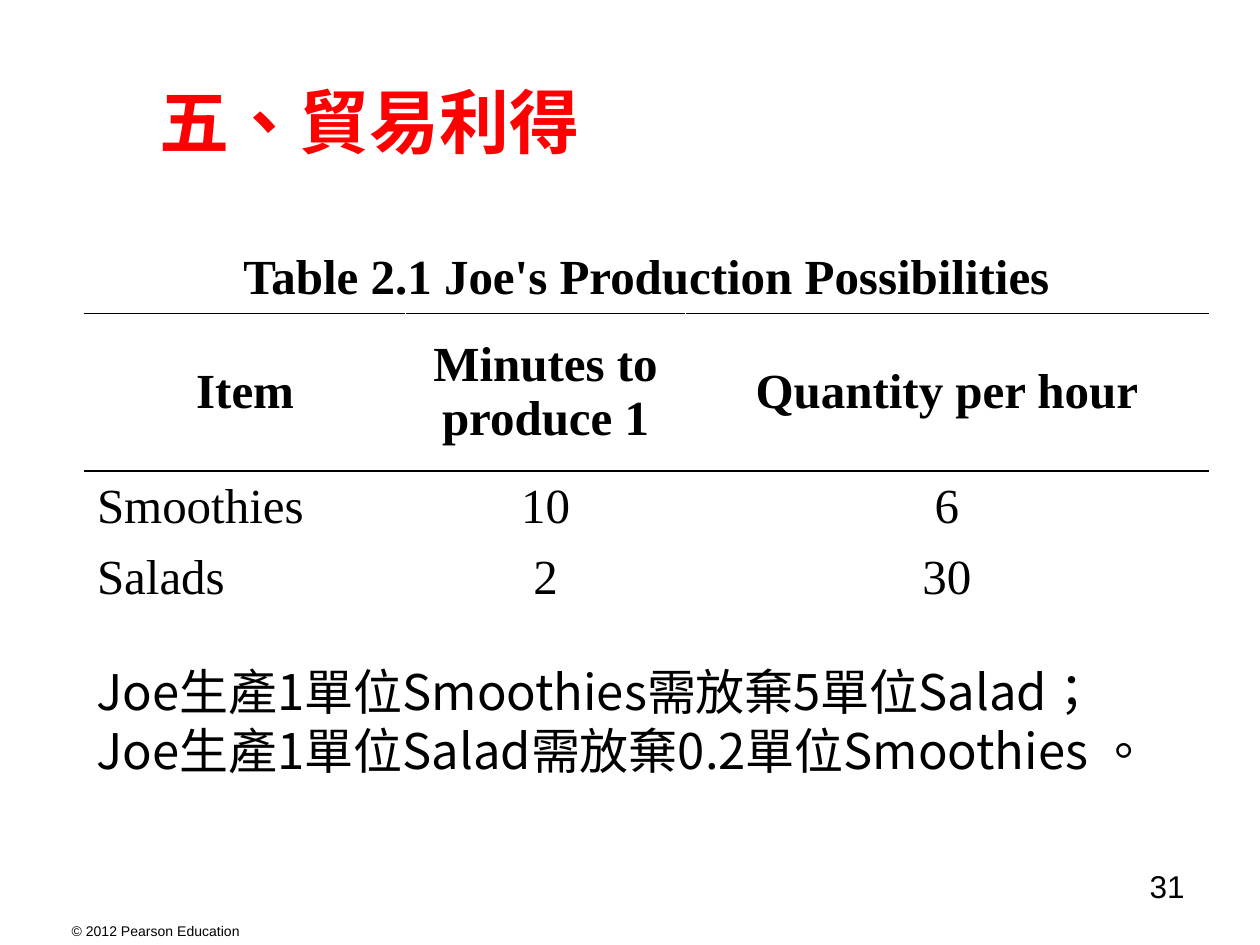
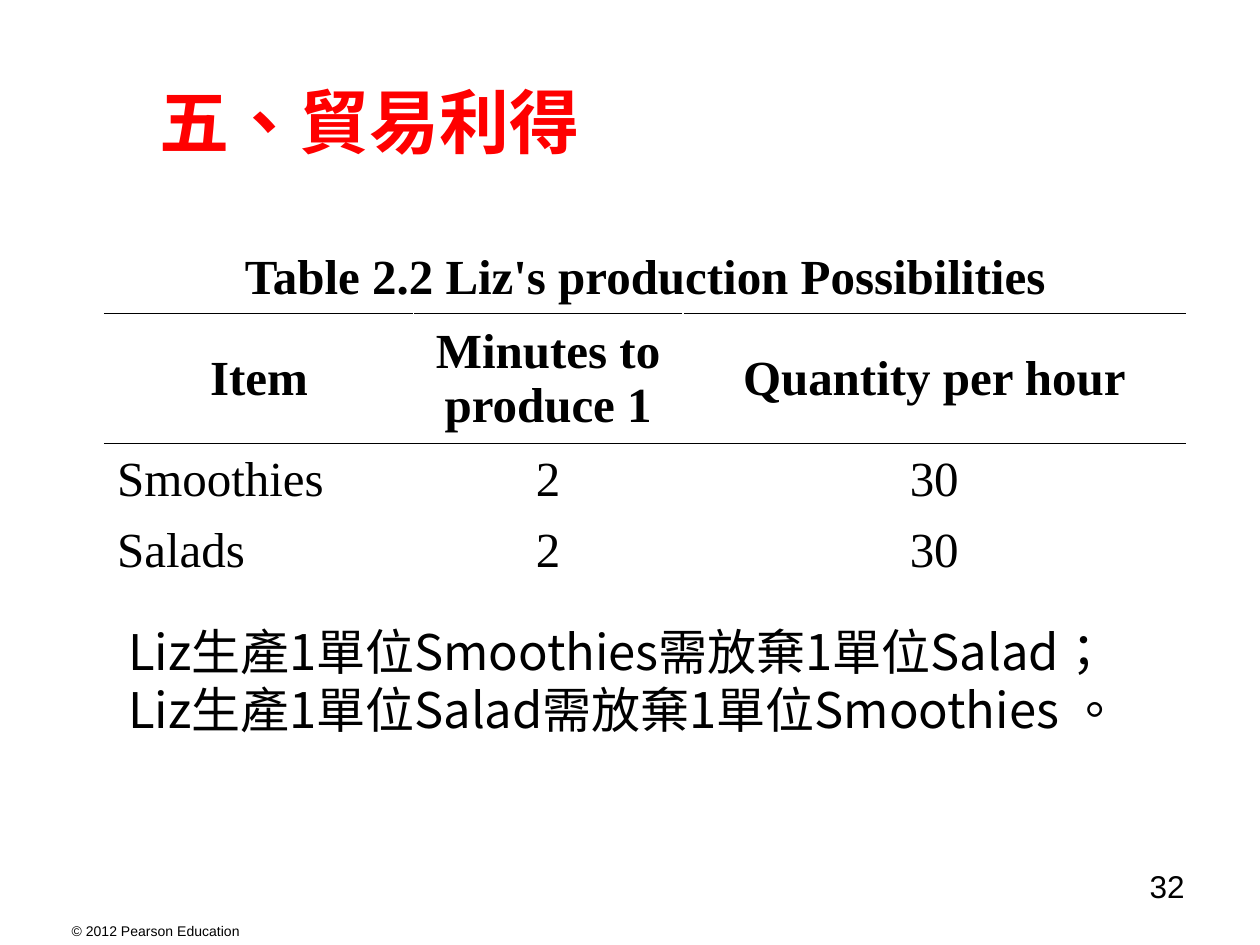
from lxml import etree
from pptx import Presentation
from pptx.dml.color import RGBColor
from pptx.enum import lang, text
from pptx.oxml import ns
from pptx.util import Inches, Pt

BLACK = "000000"
RED = "FF0000"
SERIF = "Times New Roman"
SANS = "Arial"
CHINESE = "Noto Sans CJK SC"
HEADINGS = ["Item", "Minutes to produce 1", "Quantity per hour"]
ROW_HEIGHT = 0.53


def color(value):
    return RGBColor.from_string(value)


def style(paragraph, size, name, fill=BLACK, bold=False, align=text.PP_ALIGN.LEFT, chinese=False):
    paragraph.alignment = align
    font = paragraph.font
    font.size, font.name, font.bold = Pt(size), name, bold
    font.color.rgb = color(fill)
    if chinese:
        font.language_id = lang.MSO_LANGUAGE_ID.TRADITIONAL_CHINESE
        properties = paragraph._p.pPr.find(ns.qn("a:defRPr"))
        etree.SubElement(properties, ns.qn("a:ea"), typeface=CHINESE)


def add_text(slide, box, lines, size, name, anchor=text.MSO_ANCHOR.TOP, **options):
    frame = slide.shapes.add_textbox(*map(Inches, box)).text_frame
    frame.word_wrap = True
    frame.vertical_anchor = anchor
    for index, line in enumerate(lines):
        paragraph = frame.add_paragraph() if index else frame.paragraphs[0]
        paragraph.text = line
        style(paragraph, size, name, **options)


def add_frame(slide, number):
    add_text(slide, (0.47, 7.27, 1.85, 0.23), ["© 2012 Pearson Education"], 8, SANS)
    add_text(slide, (1.17, 0.33, 8.25, 1.25), ["五、貿易利得"], 40, SERIF,
             anchor=text.MSO_ANCHOR.MIDDLE, fill=RED, bold=True, chinese=True)
    add_text(slide, (7.17, 6.83, 2.33, 0.52), [str(number)], 18, SANS, align=text.PP_ALIGN.RIGHT)


def add_rule(cell, edge):
    line = etree.Element(ns.qn(f"a:{edge}"), w=str(Pt(1)))
    fill = etree.SubElement(line, ns.qn("a:solidFill"))
    etree.SubElement(fill, ns.qn("a:srgbClr"), val=BLACK)
    cell._tc.get_or_add_tcPr().insert(0, line)


def add_production_table(slide, left, top, widths, heading_height, caption, data):
    heights = [ROW_HEIGHT, heading_height, ROW_HEIGHT, ROW_HEIGHT]
    rows = [[caption, "", ""], HEADINGS, *data]
    box = (left, top, sum(widths), sum(heights))
    table = slide.shapes.add_table(len(rows), len(widths), *map(Inches, box)).table
    table.first_row = table.horz_banding = False
    for column, width in zip(table.columns, widths):
        column.width = Inches(width)
    for row, height in zip(table.rows, heights):
        row.height = Inches(height)
    table.cell(0, 0).merge(table.cell(0, len(widths) - 1))
    for row_index, values in enumerate(rows):
        for column_index, value in enumerate(values):
            cell = table.cell(row_index, column_index)
            cell.fill.background()
            cell.vertical_anchor = text.MSO_ANCHOR.MIDDLE
            if row_index in (0, 1):
                add_rule(cell, "lnB")
            if row_index in (1, 2):
                add_rule(cell, "lnT")
            if cell.is_spanned:
                continue
            cell.text = value
            is_item = row_index > 1 and column_index == 0
            align = text.PP_ALIGN.LEFT if is_item else text.PP_ALIGN.CENTER
            style(cell.text_frame.paragraphs[0], 28, SERIF, bold=row_index < 2, align=align)


def add_production_slide(presentation, number, table, cost_position, costs):
    slide = presentation.slides.add_slide(presentation.slide_layouts[6])
    add_frame(slide, number)
    add_production_table(slide, **table)
    add_text(slide, (*cost_position, 9, 1.7), costs, 28, CHINESE, chinese=True)


def main():
    presentation = Presentation()
    presentation.slide_width, presentation.slide_height = Inches(10), Inches(7.5)
    add_production_slide(
        presentation, 31,
        dict(left=0.67, top=1.92, widths=[2.55, 2.22, 4.15], heading_height=1.25,
             caption="Table 2.1 Joe's Production Possibilities",
             data=[["Smoothies", "10", "6"], ["Salads", "2", "30"]]),
        (0.67, 5.2),
        ["Joe生產1單位Smoothies需放棄5單位Salad；",
         "Joe生產1單位Salad需放棄0.2單位Smoothies 。"])
    add_production_slide(
        presentation, 32,
        dict(left=0.83, top=1.92, widths=[2.45, 2.14, 3.99], heading_height=0.96,
             caption="Table 2.2 Liz's production Possibilities",
             data=[["Smoothies", "2", "30"], ["Salads", "2", "30"]]),
        (0.92, 4.88),
        ["Liz生產1單位Smoothies需放棄1單位Salad；",
         "Liz生產1單位Salad需放棄1單位Smoothies 。"])
    presentation.save("out.pptx")


if __name__ == "__main__":
    main()
